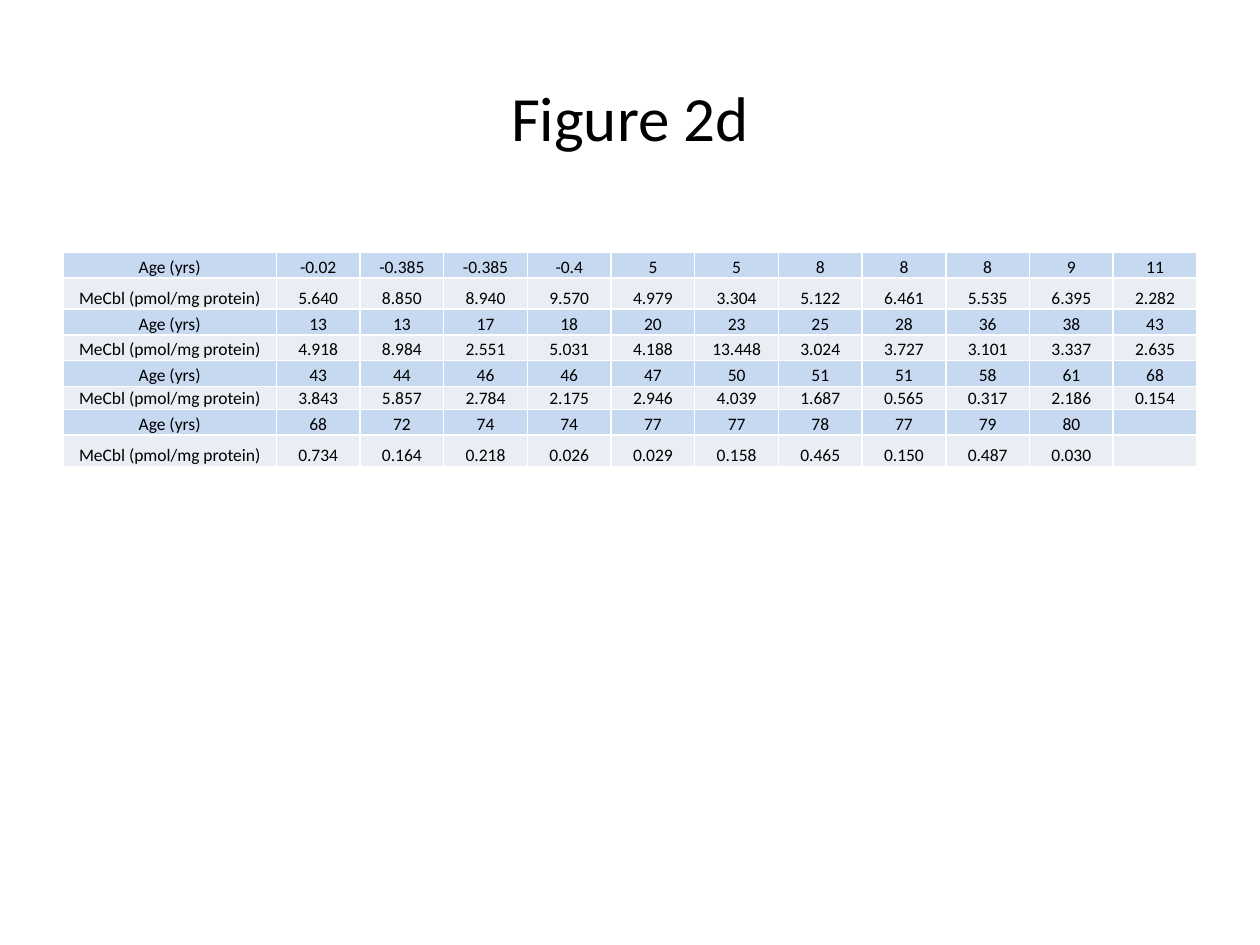
"""Build the Figure 2d slide: a table of MeCbl levels by age."""
from lxml import etree
from pptx import Presentation
from pptx.dml.color import RGBColor
from pptx.enum.text import MSO_ANCHOR, PP_ALIGN
from pptx.oxml.ns import qn
from pptx.util import Cm, Pt

MIDDLE, BOTTOM = MSO_ANCHOR.MIDDLE, MSO_ANCHOR.BOTTOM
CENTER = PP_ALIGN.CENTER
BLACK = RGBColor(0x00, 0x00, 0x00)
WHITE = RGBColor(0xFF, 0xFF, 0xFF)
AGE_FILL = RGBColor(0xC6, 0xD9, 0xF1)
MECBL_FILL = RGBColor(0xE9, 0xED, 0xF4)
FONT = "Calibri"
CELL_SIZE = Pt(10)

TITLE = "Figure 2d"
ROW_KINDS = [("Age (yrs)", AGE_FILL), ("MeCbl (pmol/mg protein)", MECBL_FILL)]
MEASUREMENTS = [
    "-0.02 -0.385 -0.385 -0.4 5 5 8 8 8 9 11",
    "5.640 8.850 8.940 9.570 4.979 3.304 5.122 6.461 5.535 6.395 2.282",
    "13 13 17 18 20 23 25 28 36 38 43",
    "4.918 8.984 2.551 5.031 4.188 13.448 3.024 3.727 3.101 3.337 2.635",
    "43 44 46 46 47 50 51 51 58 61 68",
    "3.843 5.857 2.784 2.175 2.946 4.039 1.687 0.565 0.317 2.186 0.154",
    "68 72 74 74 77 77 78 77 79 80",
    "0.734 0.164 0.218 0.026 0.029 0.158 0.465 0.150 0.487 0.030",
]
ROW_HEIGHTS = [0.52, 0.63, 0.52, 0.52, 0.52, 0.46, 0.52, 0.63]
VALUE_COLUMNS = 11
LEFT, TABLE_TOP, WIDTH, LABEL_WIDTH = 1.27, 5.08, 22.86, 4.3


def format_paragraph(paragraph, size):
    paragraph.alignment = CENTER
    for run in paragraph.runs:
        run.font.name = FONT
        run.font.size = size
        run.font.color.rgb = BLACK


def add_borders(cell):
    properties = cell._tc.get_or_add_tcPr()
    for side in ("a:lnL", "a:lnR", "a:lnT", "a:lnB"):
        line = etree.SubElement(properties, qn(side), w=str(Pt(1)))
        fill = etree.SubElement(line, qn("a:solidFill"))
        etree.SubElement(fill, qn("a:srgbClr"), val=str(WHITE))


def fill_cell(cell, value, color):
    add_borders(cell)
    cell.fill.solid()
    cell.fill.fore_color.rgb = color
    cell.vertical_anchor = BOTTOM
    cell.margin_left = cell.margin_right = cell.margin_top = Cm(0.02)
    cell.margin_bottom = 0
    paragraph = cell.text_frame.paragraphs[0]
    paragraph.text = value
    format_paragraph(paragraph, CELL_SIZE)
    if not value:
        etree.SubElement(paragraph._p, qn("a:endParaRPr"), sz=str(int(CELL_SIZE.pt * 100)))


def add_title(slide):
    title = slide.shapes.title
    title.left, title.top, title.width, title.height = Cm(LEFT), Cm(0.76), Cm(WIDTH), Cm(3.18)
    title.text_frame.text = TITLE
    title.text_frame.vertical_anchor = MIDDLE
    format_paragraph(title.text_frame.paragraphs[0], Pt(36))


def add_measurements(slide):
    table = slide.shapes.add_table(
        len(MEASUREMENTS), VALUE_COLUMNS + 1,
        Cm(LEFT), Cm(TABLE_TOP), Cm(WIDTH), Cm(sum(ROW_HEIGHTS)),
    ).table
    value_width = (WIDTH - LABEL_WIDTH) / VALUE_COLUMNS
    for index, column in enumerate(table.columns):
        column.width = Cm(value_width if index else LABEL_WIDTH)
    for index, (measurements, height) in enumerate(zip(MEASUREMENTS, ROW_HEIGHTS)):
        row = table.rows[index]
        row.height = Cm(height)
        label, color = ROW_KINDS[index % 2]
        values = [label] + measurements.split()
        values += [""] * (VALUE_COLUMNS + 1 - len(values))
        for cell, value in zip(row.cells, values):
            fill_cell(cell, value, color)


def main():
    presentation = Presentation()
    presentation.slide_width, presentation.slide_height = Cm(25.4), Cm(19.05)
    slide = presentation.slides.add_slide(presentation.slide_layouts[5])
    add_title(slide)
    add_measurements(slide)
    presentation.save("out.pptx")


if __name__ == "__main__":
    main()
